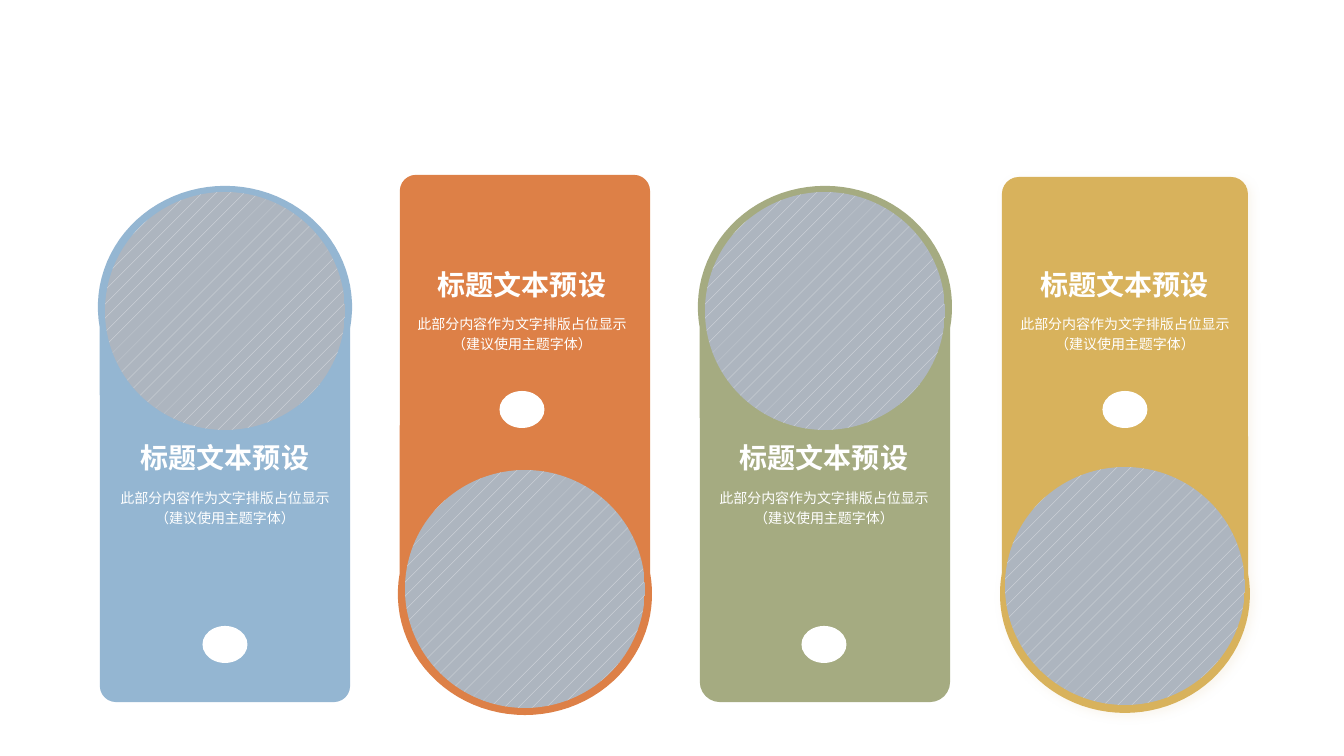
import math
import pptx
import pptx.util
from lxml import etree
from pptx.dml.color import RGBColor
from pptx.enum.dml import MSO_PATTERN
from pptx.enum.shapes import MSO_SHAPE
from pptx.enum.text import PP_ALIGN
from pptx.oxml.ns import qn

HEX = {"blue": "94B6D2", "orange": "DD8047", "green": "A5AB81",
       "gold": "D8B25C", "white": "FFFFFF", "shade": "EBDDC3",
       "dot": "E4E6EA", "gray": "ADB5BF"}
TITLE = "标题文本预设"
BODY = "此部分内容作为文字排版占位显示\v（建议使用主题字体）"
# colour, disc at top, corner radius, text centre x, disc top
CARDS = [
    ("blue", True, 14, 225, 192),
    ("orange", False, 14, 522, 470),
    ("green", True, 18, 824, 192),
    ("gold", False, 17, 1125, 467),
]
# disc at top: far edge, round centre y, title y, body y, icon y
ROWS = {True: (700, 307, 436, 481, 626), False: (177, 594, 263, 307, 391)}
LEFT, STEP, WIDTH, INSET = 100, 300, 250, 2
ROUND = 119  # vertical radius of the round end
DISC = (240, 238)
ICON = (45, 37)

PX = 12192000 / 1344


def px(n):
    return round(n * PX)


def color(name):
    return RGBColor.from_string(HEX[name])


def arc(cx, cy, rx, ry, start, stop, step):
    """Points on an ellipse, angles in degrees."""
    return [(cx + rx * math.cos(math.radians(a)),
             cy + ry * math.sin(math.radians(a)))
            for a in range(start, stop + 1, step)]


def add_text(text, x, y, w, h, size, bold=False, wrap=True, space=None):
    box = slide.shapes.add_textbox(px(x), px(y), px(w), px(h))
    box.text_frame.word_wrap = wrap
    para = box.text_frame.paragraphs[0]
    para.text = text
    para.alignment = PP_ALIGN.CENTER
    para.line_spacing = space
    for run in para.runs:
        run.font.name = "Calibri"
        run.font.size = pptx.util.Pt(size)
        run.font.bold = bold
        run.font.color.rgb = color("white")
    for gap in para._p.findall(qn("a:br")):
        etree.SubElement(gap, qn("a:rPr"), sz=str(size * 100))


def add_glow(shape):
    """Give the shape a soft outer shadow."""
    fx = shape._element.spPr.find(qn("a:effectLst"))
    glow = etree.SubElement(
        fx, qn("a:outerShdw"), blurRad=str(pptx.util.Pt(6)),
        dist=str(pptx.util.Pt(3)), dir=str(45 * 60000))
    tint = etree.SubElement(glow, qn("a:srgbClr"), val=HEX["shade"])
    etree.SubElement(tint, qn("a:alpha"), val="25000")


def add_panel(left, name, top, radius):
    """Draw a card with two small corners and one round end."""
    edge, mid = ROWS[top][:2]
    way = -1 if top else 1
    low, high = left + INSET + radius, left + WIDTH - INSET - radius
    # laid out with the round end down, then mirrored by way
    dots = (arc(low, radius, radius, radius, 180, 270, 15)
            + arc(high, radius, radius, radius, 270, 360, 15)
            + arc(left + WIDTH / 2, way * (mid - edge),
                  WIDTH / 2, ROUND, -10, 190, 4))
    dots = [(px(x), px(edge + way * y)) for x, y in dots]
    path = slide.shapes.build_freeform(*dots[0])
    path.add_line_segments(dots[1:], close=True)
    panel = path.convert_to_shape()
    panel.shadow.inherit = False
    panel.fill.solid()
    panel.fill.fore_color.rgb = color(name)
    if name == "gold":
        panel.line.fill.background()
        add_glow(panel)
    else:
        panel.line.color.rgb = color(name)
        panel.line.width = pptx.util.Pt(3)


def add_oval(x, y, size):
    oval = slide.shapes.add_shape(
        MSO_SHAPE.OVAL, px(x), px(y), px(size[0]), px(size[1]))
    oval.shadow.inherit = False
    oval.line.fill.background()
    return oval


deck = pptx.Presentation()
deck.slide_width, deck.slide_height = px(1344), px(756)
slide = deck.slides.add_slide(deck.slide_layouts[6])

for i, (name, top, radius, mid, y) in enumerate(CARDS):
    left = LEFT + i * STEP
    title_y, body_y, icon_y = ROWS[top][2:]
    add_panel(left, name, top, radius)
    add_text(TITLE, mid - 95, title_y, 190, 44, 20, bold=True, wrap=False)
    add_text(BODY, mid - 125, body_y, 250, 87, 10, space=1.2)
    icon = add_oval(mid - ICON[0] / 2, icon_y, ICON)
    icon.fill.solid()
    icon.fill.fore_color.rgb = color("white")
    disc = add_oval(left + (WIDTH - DISC[0]) / 2, y, DISC)
    disc.fill.patterned()
    disc.fill.pattern = MSO_PATTERN.PERCENT_5
    disc.fill.fore_color.rgb = color("dot")
    disc.fill.back_color.rgb = color("gray")

deck.save("out.pptx")
